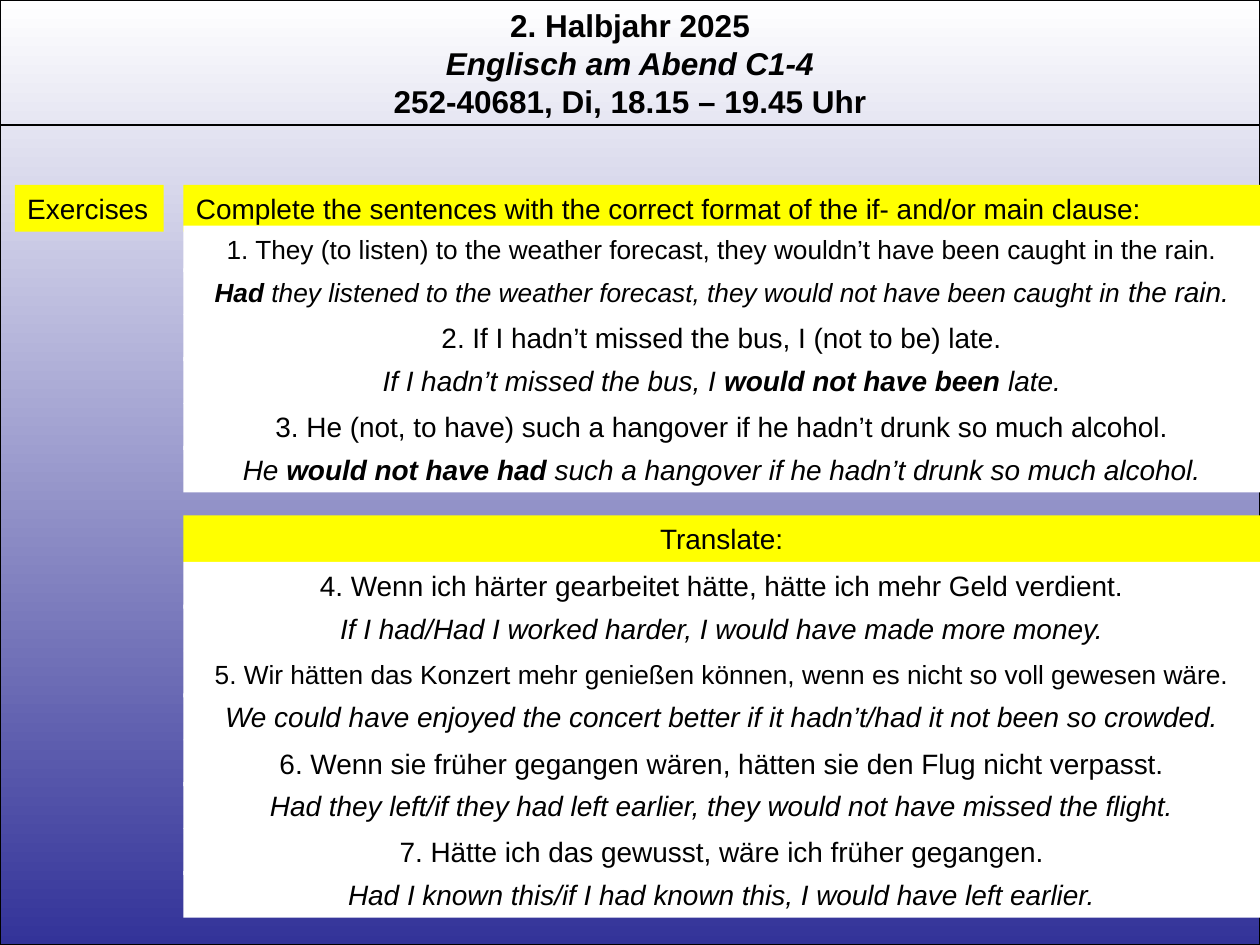
from dataclasses import dataclass

from lxml import etree
from pptx import Presentation
from pptx import util as u
from pptx.dml.color import RGBColor
from pptx.enum import shapes, text
from pptx.oxml import ns


@dataclass(frozen=True)
class Theme:
    """Colours and type sizes of the lesson slide."""
    font: str = "Arial"
    ink: RGBColor = RGBColor(0, 0, 0)
    paper: RGBColor = RGBColor(255, 255, 255)
    deep: RGBColor = RGBColor(0x33, 0x33, 0x99)
    label: RGBColor = RGBColor(255, 255, 0)
    header: int = 18
    body: int = 16
    tight: int = 15
    line: float = 0.75


THEME = Theme()
WIDTH, HEIGHT = 25.4, 19.05
ROW = 0.94
ANSWER_STEP = 0.86
PAIR_STEP = 1.79
CENTER, LEFT = text.PP_ALIGN.CENTER, text.PP_ALIGN.LEFT
BOLD = {"bold": True}
TIGHT = {"size": THEME.tight}

COURSE = [
    ["2. Halbjahr 2025"],
    [("Englisch am Abend C1-4", {"italic": True})],
    ["252-40681, Di, 18.15 – 19.45 Uhr"],
]
CONDITIONALS = [
    ([("1. They (to listen) to the weather forecast, they wouldn’t have been caught in the rain.", TIGHT)],
     [("Had ", BOLD | TIGHT),
      ("they listened to the weather forecast, they would not have been caught in ", TIGHT),
      "the rain."]),
    (["2. If I hadn’t missed the bus, I (not to be) late."],
     ["If I hadn’t missed the bus, I ", ("would not have been ", BOLD), "late."]),
    (["3. He (not, to have) such a hangover if he hadn’t drunk so much alcohol."],
     ["He ", ("would not have had ", BOLD),
      "such a hangover if he hadn’t drunk so much alcohol."]),
]
TRANSLATIONS = [
    (["4. Wenn ich härter gearbeitet hätte, hätte ich mehr Geld verdient."],
     ["If I had/Had I worked harder, I would have made more money."]),
    ([("5. Wir hätten das Konzert mehr genießen können, wenn es nicht so voll gewesen wäre.", TIGHT)],
     ["We could have enjoyed the concert better if it hadn’t/had it not been so crowded."]),
    (["6. Wenn sie früher gegangen wären, hätten sie den Flug nicht verpasst."],
     ["Had they left/if they had left earlier, they would not have missed the flight."]),
    (["7. Hätte ich das gewusst, wäre ich früher gegangen."],
     ["Had I known this/if I had known this, I would have left earlier."]),
]


def write(frame, lines, align=CENTER, anchor=text.MSO_ANCHOR.MIDDLE, **base):
    """Fill a text frame with lines of runs, each run plain or with its own format."""
    frame.word_wrap = True
    frame.auto_size = text.MSO_AUTO_SIZE.NONE
    frame.vertical_anchor = anchor
    for index, line in enumerate(lines):
        paragraph = frame.add_paragraph() if index else frame.paragraphs[0]
        paragraph.alignment = align
        for part in line:
            words, extra = (part, {}) if isinstance(part, str) else part
            style = {"size": THEME.body, "bold": False, "italic": False} | base | extra
            run = paragraph.add_run()
            run.text = words
            run.font.name = THEME.font
            run.font.size = u.Pt(style["size"])
            run.font.bold = style["bold"]
            run.font.italic = style["italic"]
            run.font.color.rgb = THEME.ink


def add_box(slide, left, top, width, height):
    """Add a rectangle without shadow."""
    box = slide.shapes.add_shape(shapes.MSO_SHAPE.RECTANGLE,
                                 *map(u.Cm, (left, top, width, height)))
    box.shadow.inherit = False
    return box


def add_row(slide, left, top, width, line, color=THEME.paper, **style):
    """Add one filled row of text."""
    row = add_box(slide, left, top, width, ROW)
    row.fill.solid()
    row.fill.fore_color.rgb = color
    row.line.fill.background()
    write(row.text_frame, [line], **style)


def add_backdrop(slide, left, top, width, height):
    """Add the outlined gradient behind the title."""
    backdrop = add_box(slide, left, top, width, height)
    backdrop.fill.gradient()
    backdrop.fill.gradient_angle = 270
    for stop, color in zip(backdrop.fill.gradient_stops, (THEME.paper, THEME.deep)):
        stop.color.rgb = color
    backdrop.line.color.rgb = THEME.ink
    backdrop.line.width = u.Pt(THEME.line)
    slide.shapes.title.element.addprevious(backdrop.element)


def add_header(slide, left, top, width, height):
    """Place the course title and the rule below it."""
    title = slide.shapes.title
    title.left, title.top, title.width, title.height = map(u.Cm, (left, top, width, height))
    write(title.text_frame, COURSE, anchor=text.MSO_ANCHOR.TOP,
          size=THEME.header, bold=True)
    bottom = u.Cm(top + height - 0.05)
    rule = slide.shapes.add_connector(shapes.MSO_CONNECTOR.STRAIGHT,
                                      u.Cm(left), bottom, u.Cm(left + width), bottom)
    rule.line.color.rgb = THEME.ink
    rule.line.width = u.Pt(THEME.line)
    etree.SubElement(rule.element.spPr, ns.qn("a:effectLst"))


def add_exercise(slide, left, top, width, heading, pairs, first, align=CENTER):
    """Add a heading and its sentence and answer pairs, starting first below the top."""
    add_row(slide, left, top, width, [heading], color=THEME.label, align=align)
    for index, (sentence, answer) in enumerate(pairs):
        pair_top = top + first + index * PAIR_STEP
        add_row(slide, left, pair_top, width, sentence)
        add_row(slide, left, pair_top + ANSWER_STEP, width, answer, italic=True)


def main():
    """Build and save the lesson slide."""
    deck = Presentation()
    deck.slide_width, deck.slide_height = u.Cm(WIDTH), u.Cm(HEIGHT)
    slide = deck.slides.add_slide(deck.slide_layouts.get_by_name("Title Only"))
    add_backdrop(slide, 0, 0, WIDTH, HEIGHT)
    add_header(slide, 0, 0, WIDTH, 2.57)

    top, left = 3.73, 3.7
    width = WIDTH - left
    add_row(slide, 0.3, top, 3, ["Exercises"], color=THEME.label, align=LEFT)
    add_exercise(slide, left, top, width,
                 "Complete the sentences with the correct format of the if- and/or main clause:",
                 CONDITIONALS, first=0.82, align=LEFT)
    add_exercise(slide, left, 10.39, width, "Translate:", TRANSLATIONS, first=ROW)
    deck.save("out.pptx")


if __name__ == "__main__":
    main()
